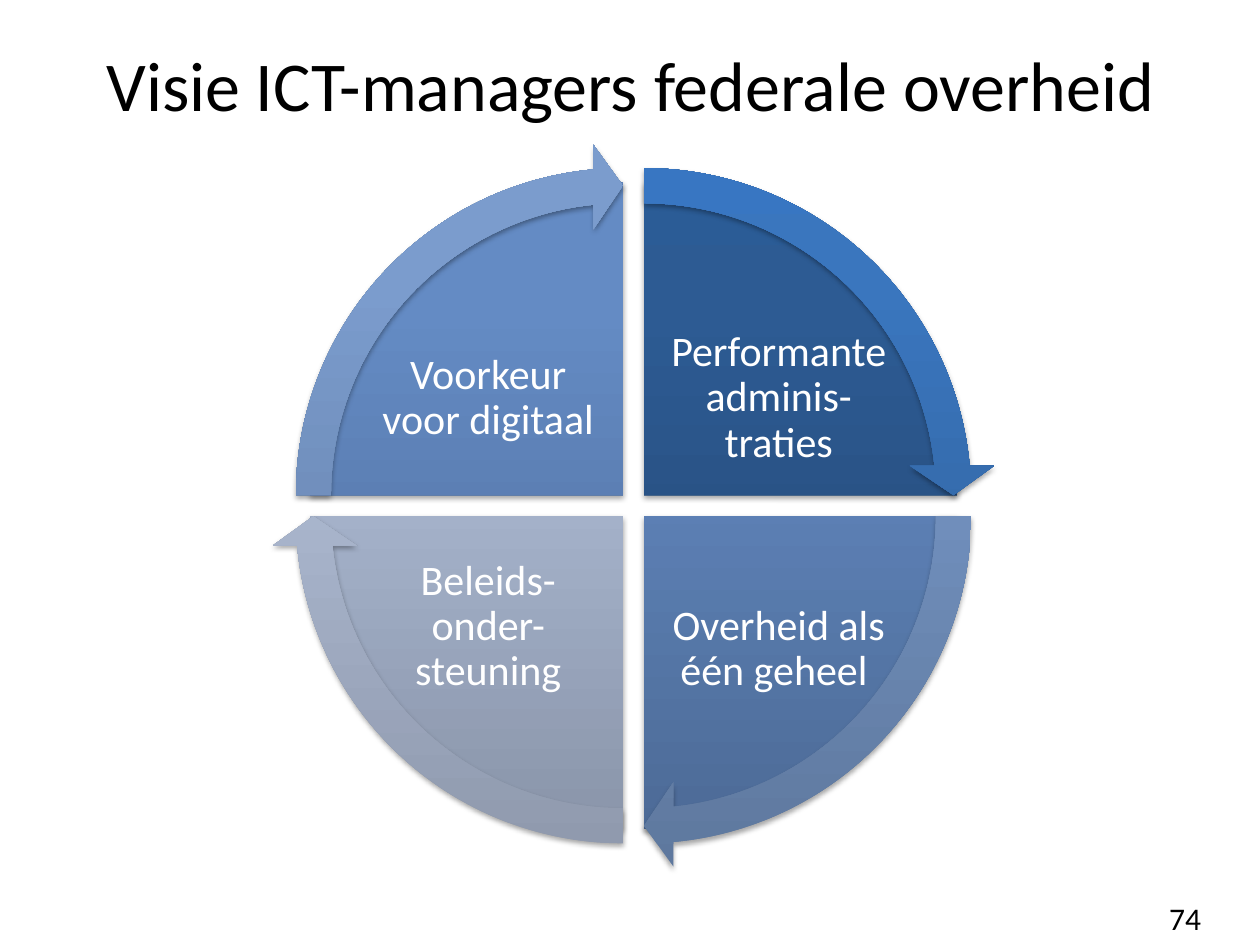
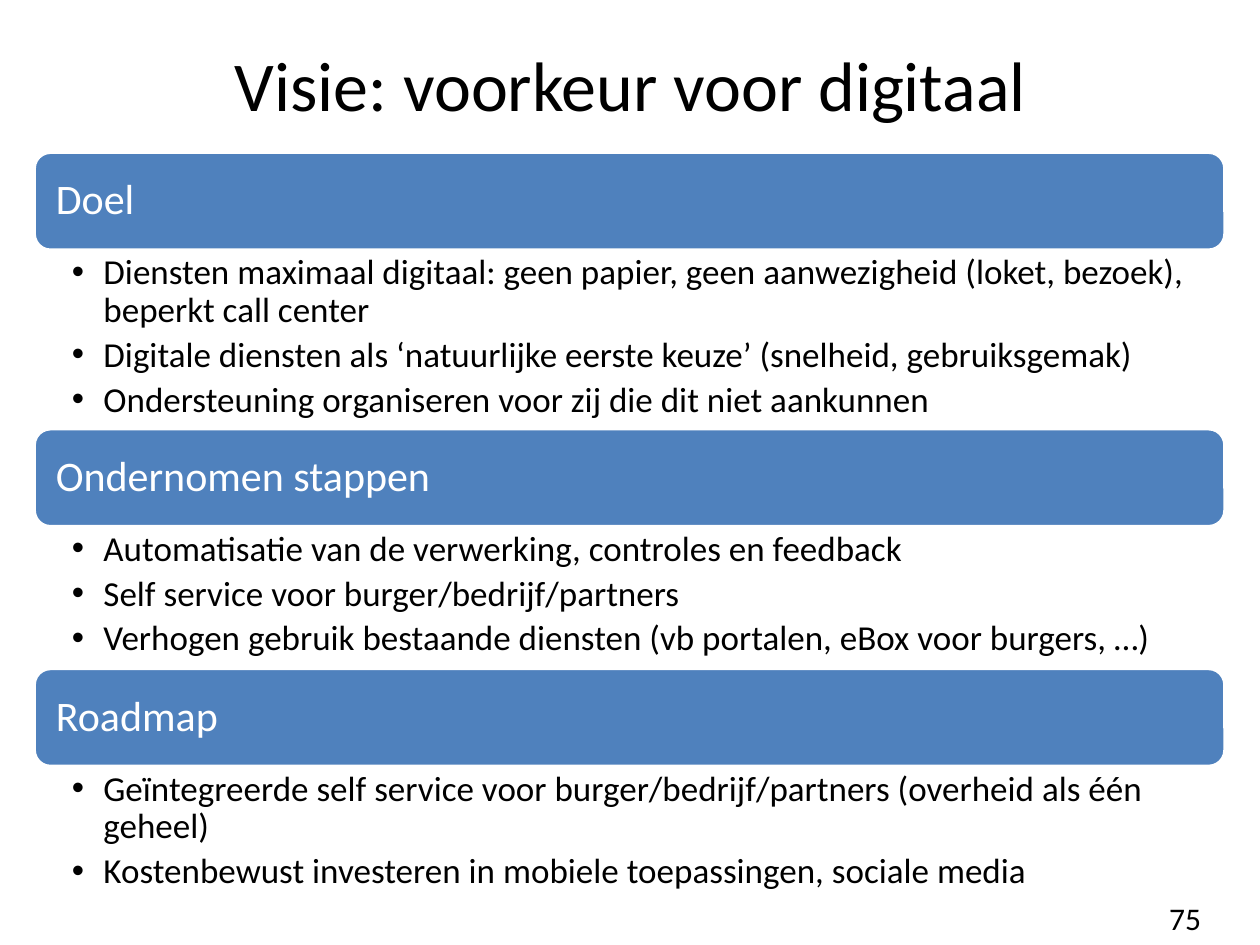
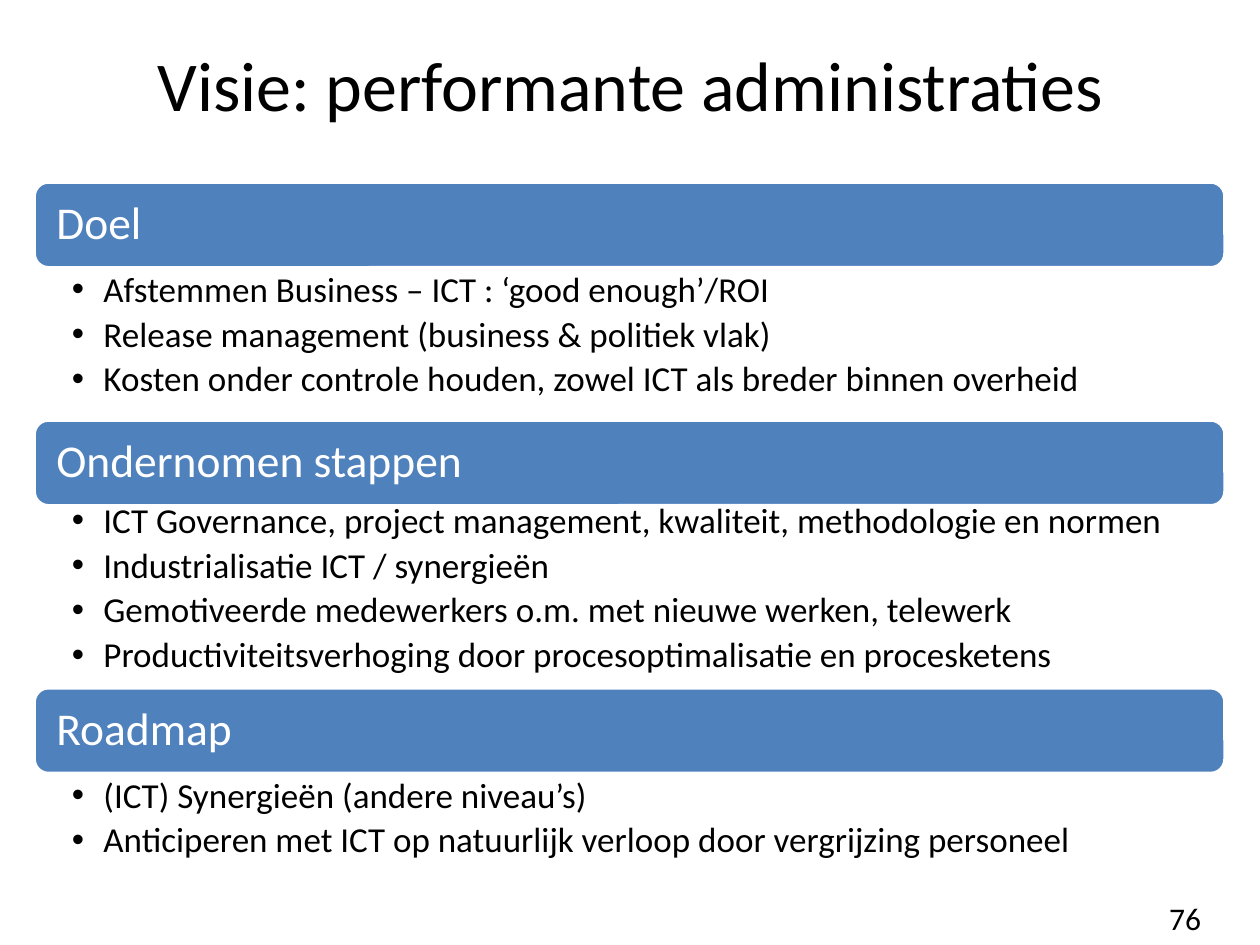
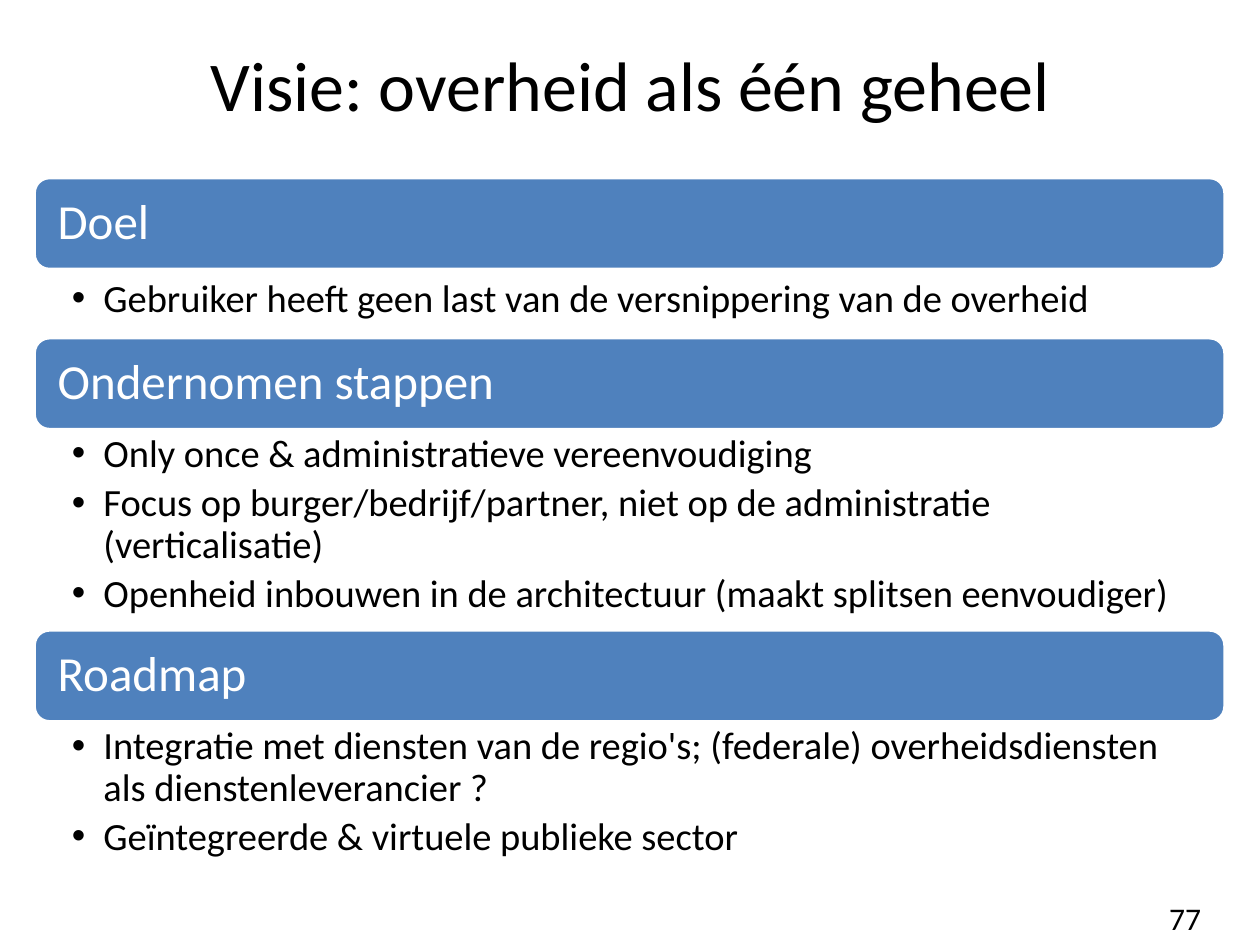
from copy import deepcopy

from lxml.etree import SubElement
from pptx import Presentation
from pptx.dml.color import RGBColor
from pptx.enum.shapes import MSO_SHAPE
from pptx.enum.text import MSO_ANCHOR, PP_ALIGN
from pptx.oxml.ns import qn
from pptx.util import Pt

FONT = "Calibri"
COLORS = {
    "ink": "000000",
    "white": "FFFFFF",
    "bar": "4F81BD",
}
# Gradient colours from bottom to top
PIES = {
    "deep": ("234671", "2D5B93", "2B5C96"),
    "mid": ("4D6B97", "648BC4", "638BC7"),
    "pale": ("8A95AA", "B3C2DC", "B4C3DE"),
}
RINGS = {
    "deep": ("2D5B92", "3A76BE", "3876C2"),
    "mid": ("5E789E", "7B9CCD", "7A9CCF"),
    "pale": ("8E98AC", "B8C6DF", "B8C6E1"),
}
STOPS = (0, 0.8, 1)

# Angles of pies and arrows, in units of 100000/60000 degree
TURN, QUARTER, HEAD = 216, 54, 3.28

# Text, tone, start angle, side across, side down, anchor
PARTS = [
    ("Performante adminis-traties", "deep", 162, 1, -1, MSO_ANCHOR.MIDDLE),
    ("Overheid als één geheel ", "mid", 0, 1, 1, MSO_ANCHOR.BOTTOM),
    ("Beleids-onder-steuning", "pale", 54, -1, 1, MSO_ANCHOR.BOTTOM),
    ("Voorkeur voor digitaal", "mid", 108, -1, -1, MSO_ANCHOR.MIDDLE),
]

HEADS = ("Doel", "Ondernomen stappen", "Roadmap")

# Each section: room below its bar, shift of its list, bullets
LISTS = [
    {
        "title": "Visie: voorkeur voor digitaal",
        "top": 87, "bar": 56, "head": 24, "size": 20,
        "parts": [
            (102, 0, [
                "Diensten maximaal digitaal: geen papier, geen aanwezigheid "
                "(loket, bezoek), beperkt call center",
                "Digitale diensten als ‘natuurlijke eerste keuze’ "
                "(snelheid, gebruiksgemak)",
                "Ondersteuning organiseren voor zij die dit niet aankunnen",
            ]),
            (81, 0, [
                "Automatisatie van de verwerking, controles en feedback",
                "Self service voor burger/bedrijf/partners",
                "Verhogen gebruik bestaande diensten "
                "(vb portalen, eBox voor burgers, …)",
            ]),
            (76, 0, [
                "Geïntegreerde self service voor burger/bedrijf/partners "
                "(overheid als één geheel)",
                "Kostenbewust investeren in mobiele toepassingen, "
                "sociale media",
            ]),
        ],
    },
    {
        "title": "Visie: performante administraties",
        "top": 104, "bar": 49, "head": 26, "size": 20,
        "parts": [
            (87, 0, [
                "Afstemmen Business – ICT : ‘good enough’/ROI",
                "Release management (business & politiek vlak)",
                "Kosten onder controle houden, zowel ICT als breder "
                "binnen overheid",
            ]),
            (104, -4, [
                "ICT Governance, project management, kwaliteit, "
                "methodologie en normen",
                "Industrialisatie ICT / synergieën",
                "Gemotiveerde medewerkers o.m. met nieuwe werken, telewerk",
                "Productiviteitsverhoging door procesoptimalisatie "
                "en procesketens",
            ]),
            (56, 0, [
                "(ICT) Synergieën (andere niveau’s)",
                "Anticiperen met ICT op natuurlijk verloop door vergrijzing "
                "personeel",
            ]),
        ],
    },
    {
        "title": "Visie: overheid als één geheel",
        "top": 101.5, "bar": 52.5, "head": 28, "size": 22,
        "parts": [
            (39, 3, [
                "Gebruiker heeft geen last van de versnippering "
                "van de overheid",
            ]),
            (114.5, 0, [
                "Only once & administratieve vereenvoudiging",
                "Focus op burger/bedrijf/partner, niet op de administratie "
                "(verticalisatie)",
                "Openheid inbouwen in de architectuur "
                "(maakt splitsen eenvoudiger)",
            ]),
            (84, 0, [
                "Integratie met diensten van de regio's; (federale) "
                "overheidsdiensten als dienstenleverancier ?",
                "Geïntegreerde & virtuele publieke sector",
            ]),
        ],
    },
]


def rgb(tone):
    return RGBColor.from_string(COLORS[tone])


def place(box):
    return [Pt(n) for n in box]


def style(para, size, tone, align=PP_ALIGN.LEFT, space=None):
    para.alignment = align
    if space is not None:
        para.line_spacing = 0.9
        para.space_after = Pt(space)
    for run in para.runs:
        run.font.name = FONT
        run.font.size = Pt(size)
        run.font.color.rgb = rgb(tone)


def setup(frame, pads, anchor=MSO_ANCHOR.TOP):
    frame.word_wrap = True
    frame.vertical_anchor = anchor
    (frame.margin_left, frame.margin_top,
     frame.margin_right, frame.margin_bottom) = place(pads)


def start(deck, title, number):
    """Add a slide with its title and page number."""
    slide = deck.slides.add_slide(deck.slide_layouts[5])
    head = slide.shapes.title
    head.left, head.top, head.width, head.height = place((20, 10, 680.5, 75.5))
    head.text_frame.text = title
    head.text_frame.vertical_anchor = MSO_ANCHOR.MIDDLE
    style(head.text_frame.paragraphs[0], 40, "ink", PP_ALIGN.CENTER)

    page = slide.shapes.add_textbox(*place((661, 510, 59, 21)))
    setup(page.text_frame, (7.2, 3.6, 7.2, 3.6))
    page.text_frame.text = str(number)
    style(page.text_frame.paragraphs[0], 18, "ink")
    return slide


def shade(shape, tones):
    """Give a shape an upward gradient and a soft shadow below."""
    shape.line.fill.background()
    shape.fill.gradient()
    shape.fill.gradient_angle = 90
    props = shape.fill._xPr
    stops = props.find(".//" + qn("a:gsLst"))
    stops.append(deepcopy(stops[0]))
    for stop, spot, tone in zip(shape.fill.gradient_stops, STOPS, tones):
        stop.position = spot
        stop.color.rgb = RGBColor.from_string(tone)
    shape.shadow.inherit = False
    glow = SubElement(props.find(qn("a:effectLst")), qn("a:outerShdw"),
                      blurRad=str(Pt(3.1)), dist=str(Pt(1.8)),
                      dir="5400000", rotWithShape="0")
    tint = SubElement(glow, qn("a:srgbClr"), val=COLORS["ink"])
    SubElement(tint, qn("a:alpha"), val="35000")


def disc(slide, kind, x, y, size, angles, tones):
    """Add a round shape centred on a point."""
    box = (x - size / 2, y - size / 2, size, size)
    shape = slide.shapes.add_shape(kind, *place(box))
    for i, angle in enumerate(angles):
        shape.adjustments[i] = angle
    shade(shape, tones)


def wheel(slide, box):
    """Four quarters with labels, then the arrows around them."""
    left, top, size = box
    x, y = left + size / 2, top + size / 2
    gap, wide, high = 6, 132, 98
    pie, ring = size - 2 * gap, size + 32

    # Quarters and labels
    for text, tone, angle, across, down, anchor in PARTS:
        disc(slide, MSO_SHAPE.PIE, x + across * gap, y + down * gap, pie,
             (angle, (angle + QUARTER) % TURN), PIES[tone])
        spot = (x + across * (17 + wide / 2) - wide / 2,
                y + down * (12.5 + high / 2) - high / 2, wide, high)
        label = slide.shapes.add_textbox(*place(spot))
        setup(label.text_frame, (2.4,) * 4, anchor)
        label.text_frame.text = text
        style(label.text_frame.paragraphs[0], 24, "white",
              PP_ALIGN.CENTER, 8.4)

    # Arrows
    for _, tone, angle, across, down, _ in PARTS:
        disc(slide, MSO_SHAPE.CIRCULAR_ARROW, x + across * gap, y + down * gap,
             ring, (0.05, HEAD, angle + QUARTER - HEAD, angle, 0.06),
             RINGS[tone])


def banner(slide, box, text, size):
    """Rounded heading bar."""
    bar = slide.shapes.add_shape(MSO_SHAPE.ROUNDED_RECTANGLE, *place(box))
    bar.shadow.inherit = False
    bar.fill.solid()
    bar.fill.fore_color.rgb = rgb("bar")
    bar.line.color.rgb = rgb("white")
    bar.line.width = Pt(2)
    pad = size * 0.3
    setup(bar.text_frame, (pad + 2.5, 0, pad + 2.5, 0), MSO_ANCHOR.MIDDLE)
    bar.text_frame.text = text
    style(bar.text_frame.paragraphs[0], size, "white", space=size * 0.35)


def points(slide, box, lines, size, right):
    """Bulleted list under a bar."""
    body = slide.shapes.add_textbox(*place(box))
    setup(body.text_frame, (21.6, 2.5, right, 2.5))
    body.text_frame.text = "\n".join(lines)
    for para in body.text_frame.paragraphs:
        para.level = 1
        style(para, size, "ink", space=size * 0.2)
        props = para._p.get_or_add_pPr()
        props.set("marL", str(Pt(18)))
        props.set("indent", str(-Pt(18)))
        SubElement(props, qn("a:buFont"), typeface="Arial")
        SubElement(props, qn("a:buChar"), char="•")


def stack(slide, plan, left, wide):
    """Bars and lists, one below the other."""
    y, bar = plan["top"], plan["bar"]
    for text, (room, shift, lines) in zip(HEADS, plan["parts"]):
        banner(slide, (left, y, wide, bar), text, plan["head"])
        y += bar
        points(slide, (left, y + shift, wide, room - shift), lines,
               plan["size"], plan["head"] * 0.55)
        y += room


def main():
    deck = Presentation()
    deck.slide_width, deck.slide_height = Pt(720), Pt(540)
    first = 74
    slide = start(deck, "Visie ICT-managers federale overheid", first)
    wheel(slide, (177, 104, 370))
    for number, plan in enumerate(LISTS, first + 1):
        slide = start(deck, plan["title"], number)
        stack(slide, plan, 19.5, 680.5)
    deck.save("out.pptx")


if __name__ == "__main__":
    main()
